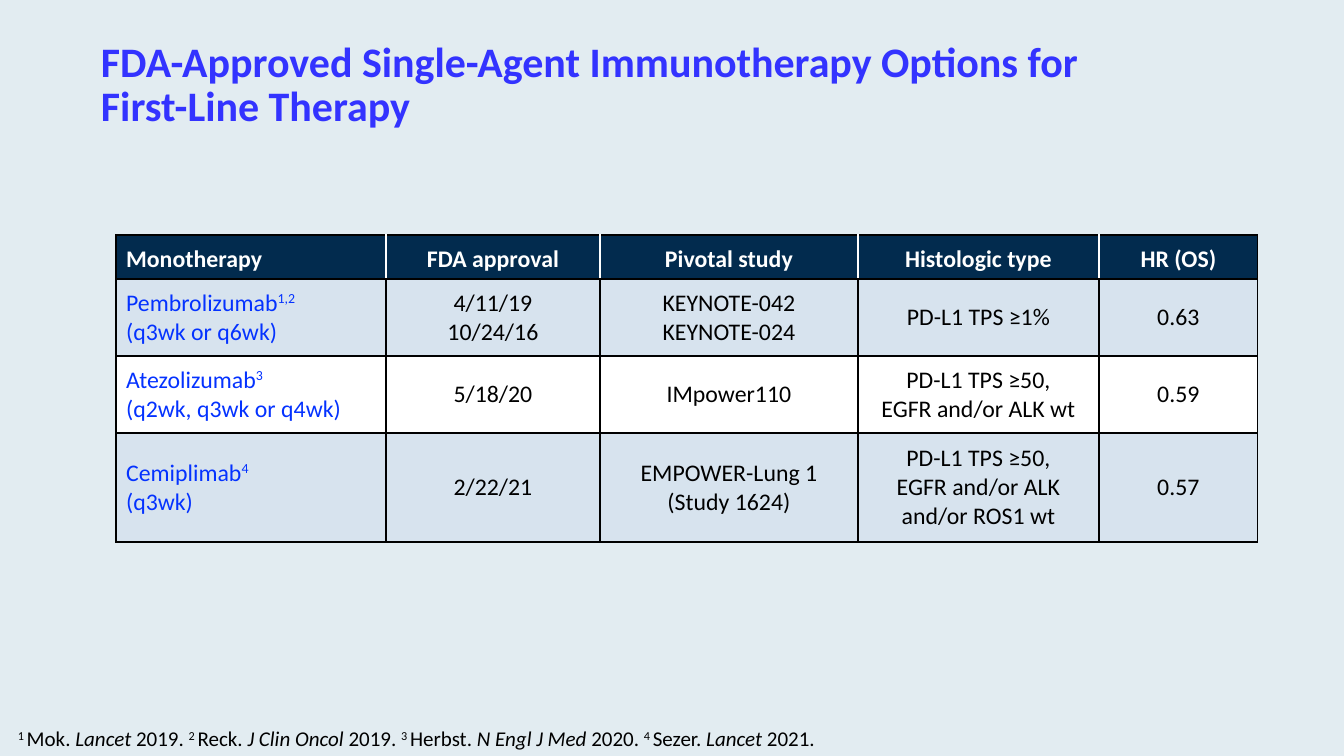
"""Build the slide on approved single-agent immunotherapy options."""
from lxml.etree import SubElement
from pptx import Presentation
from pptx.dml.color import RGBColor
from pptx.enum.text import MSO_ANCHOR as Anchor, MSO_AUTO_SIZE as AutoSize, PP_ALIGN as Align
from pptx.oxml.ns import qn
from pptx.util import Emu, Pt

EMU_PER_PX = 12192000 / 1344
SUPERSCRIPT = {"baseline": "30000"}
ITALIC = {"italic": True}

HEADERS = ["Monotherapy", "FDA approval", "Pivotal study", "Histologic type", "HR (OS)"]
THERAPIES = [
    ("Pembrolizumab", "1,2", "(q3wk or q6wk)", "4/11/19\v10/24/16",
     "KEYNOTE-042\nKEYNOTE-024", "PD-L1 TPS ≥1%", "0.63"),
    ("Atezolizumab", "3", "(q2wk, q3wk or q4wk)", "5/18/20",
     "IMpower110", "PD-L1 TPS ≥50,\nEGFR and/or ALK wt", "0.59"),
    ("Cemiplimab", "4", "(q3wk)", "2/22/21", "EMPOWER-Lung 1\n(Study 1624)",
     "PD-L1 TPS ≥50,\nEGFR and/or ALK\nand/or ROS1 wt", "0.57"),
]
REFERENCES = [
    ("Mok.", "Lancet", "2019."),
    ("Reck.", "J Clin Oncol", "2019."),
    ("Herbst.", "N Engl J Med", "2020."),
    ("Sezer.", "Lancet", "2021."),
]


def px(length):
    """Turn whole pixels into EMU."""
    return Emu(round(length * EMU_PER_PX))


def color(value):
    """Turn a hex string into a colour."""
    return RGBColor.from_string(value)


def apply(target, values):
    """Set every attribute in a dict of format values."""
    for name, value in values.items():
        setattr(target, name, value)


class SlideBuilder:
    """Hold the style and the slide, and add its elements."""

    font_name = "Calibri"
    background = "E2ECF1"
    title_color = "3333FF"
    header_fill = "022B4E"
    band_fills = ["D7E3EE", "FFFFFF"]
    drug_color = "0432FF"
    white = "FFFFFF"
    black = "000000"

    def __init__(self, presentation):
        """Add a title-only slide with a plain background."""
        self.slide = presentation.slides.add_slide(presentation.slide_layouts[5])
        fill = self.slide.background.fill
        fill.solid()
        fill.fore_color.rgb = color(self.background)

    def fill_text(self, frame, paragraphs, size, text_color, bold=False, **layout):
        """Fill a text frame with paragraphs made of (text, format) runs."""
        for index, runs in enumerate(paragraphs):
            paragraph = frame.add_paragraph() if index else frame.paragraphs[0]
            apply(paragraph, layout)
            for text, extra in runs:
                values = dict(extra)
                baseline = values.pop("baseline", None)
                for part_index, part in enumerate(text.split("\v")):
                    if part_index:
                        paragraph.add_line_break()
                    run = paragraph.add_run()
                    run.text = part
                    apply(run.font, {"name": self.font_name, "size": Pt(size),
                                     "bold": bold, **values})
                    run.font.color.rgb = color(text_color)
                    if baseline:
                        run._r.get_or_add_rPr().set("baseline", baseline)

    def title(self, box, text):
        """Place and format the title placeholder."""
        shape = self.slide.shapes.title
        apply(shape, dict(zip(("left", "top", "width", "height"), map(px, box))))
        frame = shape.text_frame
        apply(frame, {"margin_left": 0, "margin_top": 0, "margin_right": 0,
                      "margin_bottom": 0, "word_wrap": True, "auto_size": AutoSize.NONE,
                      "vertical_anchor": Anchor.MIDDLE})
        self.fill_text(frame, [[(text, {})]], 30, self.title_color, bold=True,
                       alignment=Align.LEFT, line_spacing=0.88)

    def borders(self, cell, sides):
        """Draw one-point borders on a cell from side and colour pairs."""
        properties = cell._tc.get_or_add_tcPr()
        for side, line_color in sides.items():
            line = SubElement(properties, qn(f"a:ln{side}"), w=str(Pt(1)))
            fill = SubElement(line, qn("a:solidFill"))
            SubElement(fill, qn("a:srgbClr"), val=line_color)

    def table(self, left, top, widths, heights, rows):
        """Add a table with a dark header and banded body rows."""
        frame = self.slide.shapes.add_table(len(heights), len(widths), px(left), px(top),
                                            px(sum(widths)), px(sum(heights)))
        table = frame.table
        table.horz_banding = False
        for column, width in zip(table.columns, widths):
            column.width = px(width)
        for row, height in zip(table.rows, heights):
            row.height = px(height)
        for row_index, row in enumerate(rows):
            for column_index, paragraphs in enumerate(row):
                self.cell(table, row_index, column_index, paragraphs)

    def cell(self, table, row_index, column_index, paragraphs):
        """Format and fill one table cell."""
        cell = table.cell(row_index, column_index)
        header, first = row_index == 0, column_index == 0
        last = column_index == len(table.columns) - 1
        inner = self.white if header else self.black
        self.borders(cell, {"L": self.black if first else inner,
                            "R": self.black if last else inner,
                            "T": self.black, "B": self.black})
        cell.fill.solid()
        cell.fill.fore_color.rgb = color(
            self.header_fill if header else self.band_fills[(row_index - 1) % 2])
        cell.vertical_anchor = Anchor.BOTTOM if header else Anchor.MIDDLE
        body_color = self.drug_color if first else self.black
        self.fill_text(cell.text_frame, paragraphs, 17, self.white if header else body_color,
                       bold=header, alignment=Align.LEFT if first else Align.CENTER)

    def text(self, box, runs):
        """Add a one-paragraph text box."""
        frame = self.slide.shapes.add_textbox(*map(px, box)).text_frame
        apply(frame, {"word_wrap": True, "auto_size": AutoSize.SHAPE_TO_FIT_TEXT})
        self.fill_text(frame, [runs], 15, self.black)


def plain(text):
    """Turn lines of text into unformatted paragraphs."""
    return [[(line, {})] for line in text.split("\n")]


def main():
    """Build and save the presentation."""
    presentation = Presentation()
    apply(presentation, {"slide_width": px(1344), "slide_height": px(756)})
    builder = SlideBuilder(presentation)
    builder.title((101, 41, 1142, 90),
                  "FDA-Approved Single-Agent Immunotherapy Options for \vFirst-Line Therapy")

    rows = [[plain(header) for header in HEADERS]]
    for drug, citation, schedule, *details in THERAPIES:
        therapy = [[(drug, {}), (citation, SUPERSCRIPT)], [(schedule, {})]]
        rows.append([therapy, *map(plain, details)])
    builder.table(116, 235, [270, 214, 258, 241, 159], [44, 77, 77, 109], rows)

    runs = []
    for number, (author, journal, year) in enumerate(REFERENCES, 1):
        ending = " " if number < len(REFERENCES) else ""
        runs += [(f"{number} ", SUPERSCRIPT), (f"{author} ", {}),
                 (f"{journal} ", ITALIC), (year + ending, {})]
    builder.text((8, 721, 1222, 35), runs)
    presentation.save("out.pptx")


if __name__ == "__main__":
    main()
